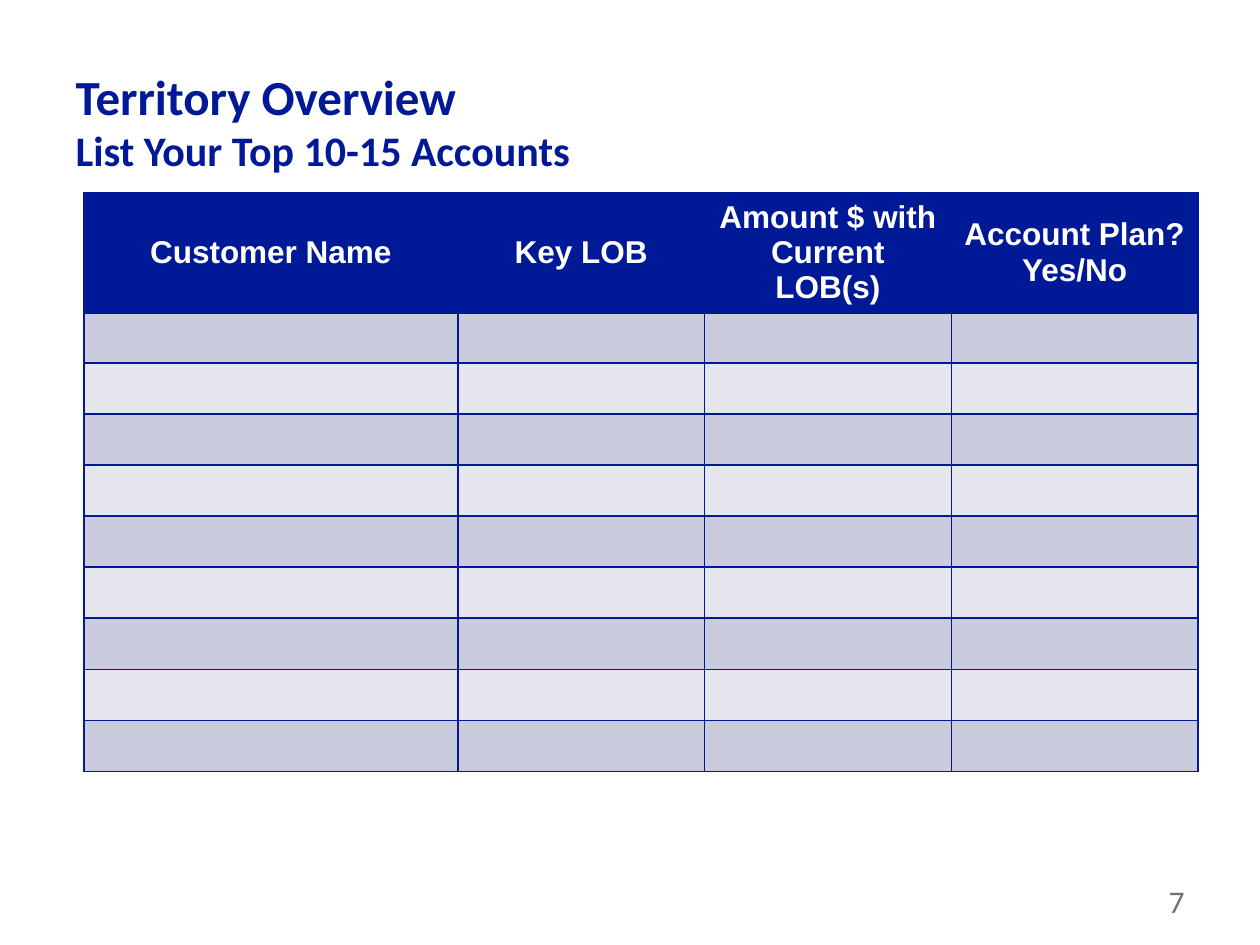
from dataclasses import dataclass

from lxml.etree import SubElement
from pptx import Presentation
from pptx.dml.color import RGBColor
from pptx.enum.text import MSO_ANCHOR as Anchor, MSO_AUTO_SIZE as AutoSize, PP_ALIGN as Align
from pptx.oxml.ns import qn
from pptx.util import Pt

TITLE_LINES = ["Territory Overview", "List Your Top 10-15 Accounts"]
# Header lines and width of each column
COLUMNS = [
    (["Customer Name"], 213.6),
    (["Key LOB"], 141),
    (["Amount $ with Current LOB(s)"], 141),
    (["Account Plan?", "Yes/No"], 141),
]
ACCOUNT_ROWS = 9
PAGE_NUMBER = "7"

TITLE_BOX = (36, 24, 648, 90)
TABLE_LEFT, TABLE_TOP, ROW_HEIGHT = 48, 110.4, 29.2
NUMBER_BOX = (516, 500.4, 168, 28.8)


@dataclass(frozen=True)
class Theme:
    navy: str = "001996"
    white: str = "FFFFFF"
    gray: str = "7A6E67"
    bands: tuple = ("CACBDC", "E6E7EE")
    heading_font: str = "Calibri"
    table_font: str = "Arial"
    title_size: int = 28
    subtitle_size: int = 24
    body_size: int = 18
    rule: int = 1
    header_rule: int = 3


THEME = Theme()


def add_text(paragraph, text, *, font, size, color, bold=False, align=Align.LEFT):
    paragraph.alignment = align
    run = paragraph.add_run()
    run.text = text
    run.font.name = font
    run.font.size = Pt(size)
    run.font.bold = bold
    run.font.color.rgb = RGBColor.from_string(color)


def set_borders(cell, color, **widths):
    """Draw the cell's edges; widths are given in points as L, R, T, B."""
    properties = cell._tc.get_or_add_tcPr()
    for edge, width in widths.items():
        line = SubElement(properties, qn(f"a:ln{edge}"), w=str(Pt(width)))
        fill = SubElement(line, qn("a:solidFill"))
        SubElement(fill, qn("a:srgbClr"), val=color)


def add_title(slide):
    title = slide.shapes.title
    title.left, title.top, title.width, title.height = map(Pt, TITLE_BOX)
    frame = title.text_frame
    frame.auto_size = AutoSize.NONE
    frame.vertical_anchor = Anchor.MIDDLE
    paragraph = frame.paragraphs[0]
    style = dict(font=THEME.heading_font, color=THEME.navy, bold=True)
    add_text(paragraph, TITLE_LINES[0], size=THEME.title_size, **style)
    paragraph.add_line_break()
    add_text(paragraph, TITLE_LINES[1], size=THEME.subtitle_size, **style)


def add_account_table(slide):
    rows = ACCOUNT_ROWS + 1
    width = sum(column_width for _, column_width in COLUMNS)
    table = slide.shapes.add_table(
        rows, len(COLUMNS), Pt(TABLE_LEFT), Pt(TABLE_TOP), Pt(width), Pt(rows * ROW_HEIGHT)
    ).table
    for row in table.rows:
        row.height = Pt(ROW_HEIGHT)

    for column, (header, column_width) in enumerate(COLUMNS):
        table.columns[column].width = Pt(column_width)
        for row in range(rows):
            cell = table.cell(row, column)
            set_borders(
                cell, THEME.navy, L=THEME.rule, R=THEME.rule,
                T=THEME.header_rule if row == 1 else THEME.rule,
                B=THEME.header_rule if row == 0 else THEME.rule,
            )
            color = THEME.bands[(row - 1) % 2] if row else THEME.navy
            cell.fill.solid()
            cell.fill.fore_color.rgb = RGBColor.from_string(color)
            cell.vertical_anchor = Anchor.MIDDLE

        frame = table.cell(0, column).text_frame
        for index, text in enumerate(header):
            paragraph = frame.add_paragraph() if index else frame.paragraphs[0]
            add_text(paragraph, text, font=THEME.table_font, size=THEME.body_size,
                     color=THEME.white, bold=True, align=Align.CENTER)


def add_page_number(slide):
    frame = slide.shapes.add_textbox(*map(Pt, NUMBER_BOX)).text_frame
    frame.word_wrap = True
    frame.vertical_anchor = Anchor.MIDDLE
    add_text(frame.paragraphs[0], PAGE_NUMBER, font=THEME.heading_font,
             size=THEME.body_size, color=THEME.gray, align=Align.RIGHT)


def main():
    presentation = Presentation()
    presentation.slide_width, presentation.slide_height = Pt(720), Pt(540)
    slide = presentation.slides.add_slide(presentation.slide_layouts.get_by_name("Title Only"))
    add_title(slide)
    add_account_table(slide)
    add_page_number(slide)
    presentation.save("out.pptx")


if __name__ == "__main__":
    main()
